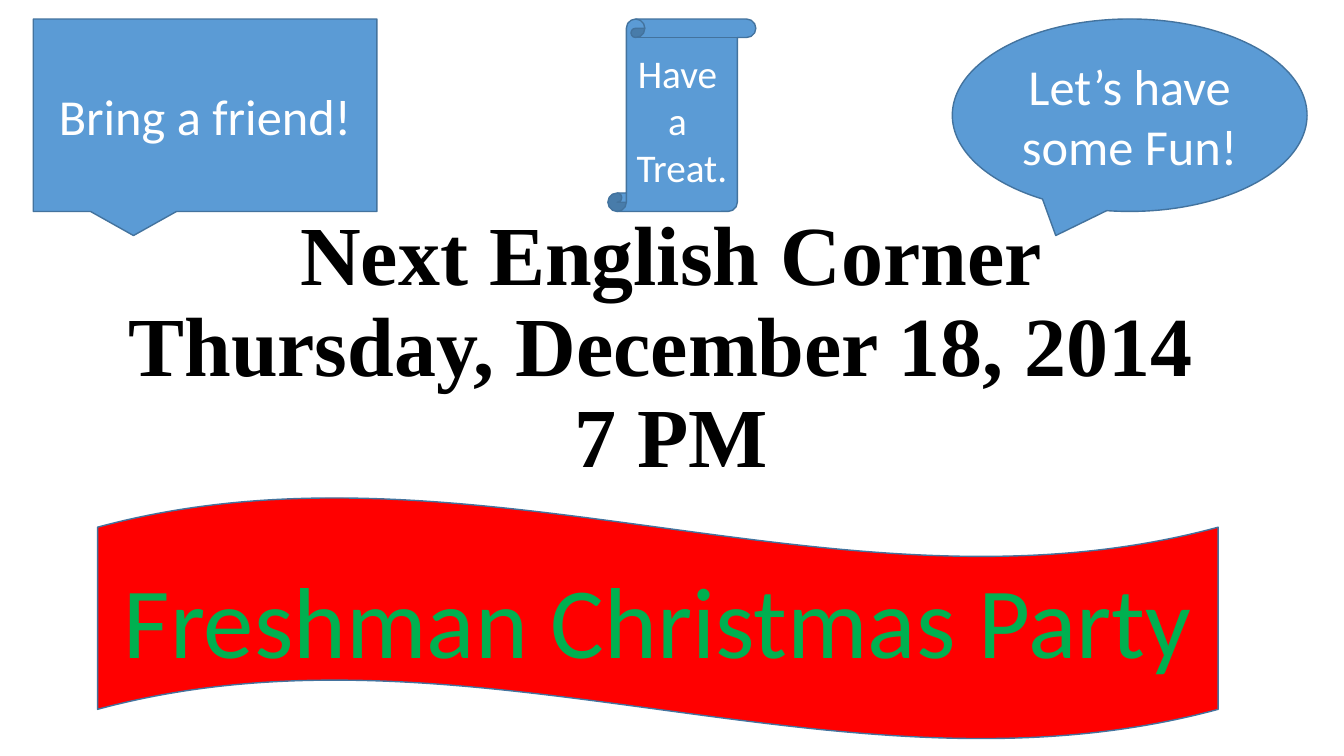
from pptx import Presentation
from pptx import util as u
from pptx.dml import color
from pptx.enum import shapes, text

COLOURS = {
    "blue": "5B9BD5",
    "outline": "43739E",
    "white": "FFFFFF",
    "black": "000000",
    "red": "FF0000",
    "green": "00B050",
}
SHAPE = shapes.MSO_SHAPE


def rgb(name):
    """Return the named colour."""
    return color.RGBColor.from_string(COLOURS[name])


def add_span(para, words, size, font, ink, bold=False):
    """Add one formatted run to a paragraph."""
    span = para.add_run()
    span.text = words
    span.font.size = u.Pt(size)
    span.font.name = font
    span.font.bold = bold
    span.font.color.rgb = rgb(ink)


def place_title(page, box, lines):
    """Set the announcement lines in the title placeholder, raised within its box."""
    title = page.shapes.title
    title.left, title.top, title.width, title.height = box
    frame = title.text_frame
    frame.word_wrap = True
    frame.auto_size = text.MSO_AUTO_SIZE.NONE
    frame.vertical_anchor = text.MSO_ANCHOR.MIDDLE
    frame.margin_bottom = u.Cm(2)
    para = frame.paragraphs[0]
    para.alignment = text.PP_ALIGN.CENTER
    para.line_spacing = 0.9
    for number, line in enumerate(lines):
        if number:
            para.add_line_break()
        add_span(para, line, 60, "Times New Roman", "black", bold=True)


def place_sign(page, box, preset, lines, size, fill="blue", ink="white"):
    """Draw a filled preset shape with centred lines of text."""
    sign = page.shapes.add_shape(preset, *box)
    sign.shadow.inherit = False
    sign.fill.solid()
    sign.fill.fore_color.rgb = rgb(fill)
    sign.line.color.rgb = rgb("outline")
    sign.line.width = u.Pt(1)
    frame = sign.text_frame
    frame.word_wrap = True
    frame.vertical_anchor = text.MSO_ANCHOR.MIDDLE
    for number, line in enumerate(lines):
        para = frame.add_paragraph() if number else frame.paragraphs[0]
        para.alignment = text.PP_ALIGN.CENTER
        add_span(para, line, size, "Calibri", ink)


def place_top_row(page, top, height):
    """Place the two callouts and the scroll along the top."""
    signs = [
        (24.0, 8.94, SHAPE.OVAL_CALLOUT, ["Let’s have some Fun!"], 36),
        (0.84, 8.66, SHAPE.RECTANGULAR_CALLOUT, ["Bring a friend!"], 36),
        (15.32, 3.73, SHAPE.VERTICAL_SCROLL, ["Have ", "a ", "Treat."], 28),
    ]
    for left, width, preset, lines, size in signs:
        box = (u.Cm(left), top, u.Cm(width), height)
        place_sign(page, box, preset, lines, size)


def main():
    """Build the party announcement."""
    deck = Presentation()
    deck.slide_width, deck.slide_height = u.Cm(33.87), u.Cm(19.05)
    page = deck.slides.add_slide(deck.slide_layouts[5])
    place_title(
        page,
        (u.Cm(2.31), u.Cm(7.9), u.Cm(29.21), u.Cm(3.68)),
        ["Next English Corner", "Thursday, December 18, 2014 ", "7 PM"],
    )
    place_top_row(page, u.Cm(0.48), u.Cm(4.85))
    place_sign(
        page,
        (u.Cm(2.46), u.Cm(12.52), u.Cm(28.24), u.Cm(6.12)),
        SHAPE.WAVE,
        ["Freshman Christmas Party"],
        72,
        fill="red",
        ink="green",
    )
    deck.save("out.pptx")


if __name__ == "__main__":
    main()
